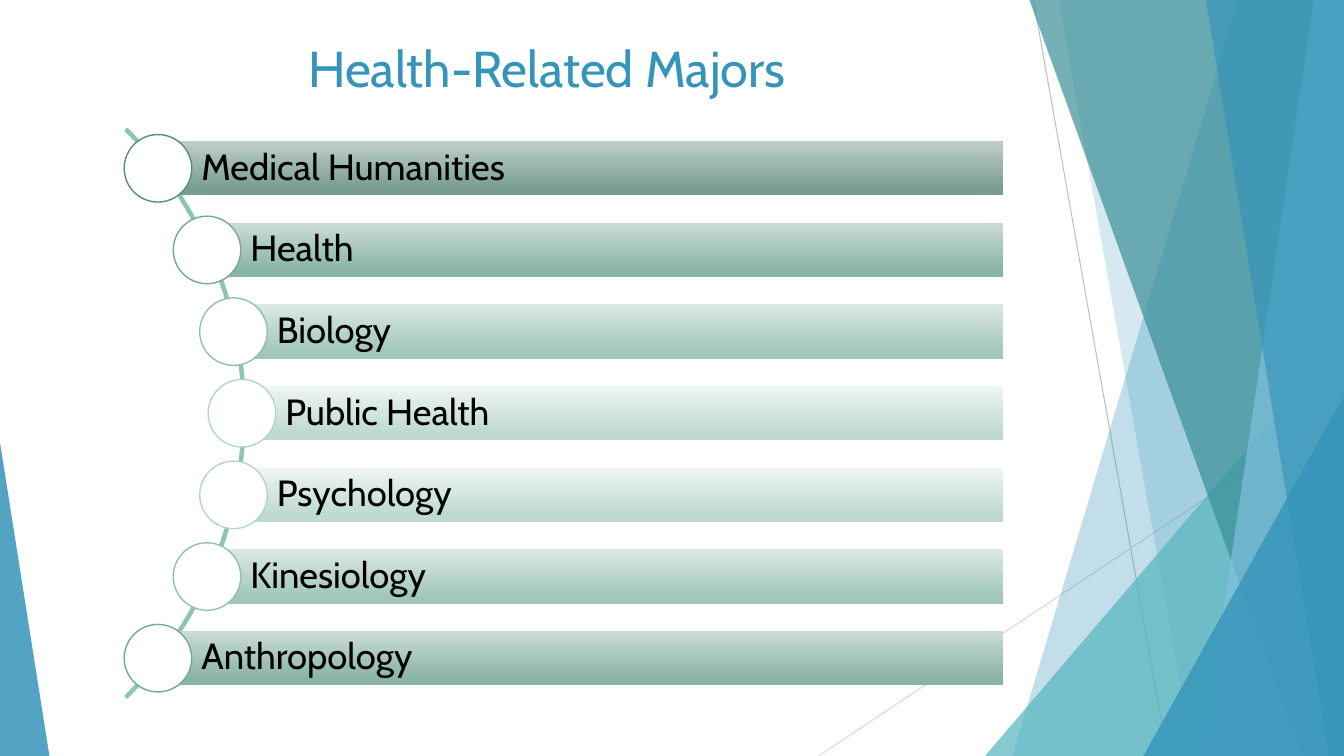
"""Build the Health-Related Majors slide."""
from dataclasses import dataclass
from math import sqrt

from lxml import etree
from pptx import Presentation
from pptx.dml.color import RGBColor
from pptx.enum.shapes import MSO_CONNECTOR, MSO_SHAPE
from pptx.enum.text import MSO_ANCHOR, PP_ALIGN
from pptx.oxml.ns import qn
from pptx.util import Inches, Pt


@dataclass(frozen=True)
class Theme:
    """Colours, font and type sizes."""
    font: str = "Cabin"
    title_size: int = 36
    label_size: int = 26
    blue: str = "3494BA"
    sky: str = "7FC1DB"
    teal: str = "58B6C0"
    deep_teal: str = "3A8F98"
    arc: str = "8CC5B2"
    white: str = "FFFFFF"
    black: str = "000000"
    dark_rule: str = "BFBFBF"
    light_rule: str = "D9D9D9"
    darkest: tuple = ("C0CFCA", "789D90", "578C7C")
    dark: tuple = ("CBDCD6", "89B4A6", "71A997")
    medium: tuple = ("DBE8E4", "A2C7BA", "93BFB0")
    light: tuple = ("EEF5F3", "BED9D0", "B5D5CA")


THEME = Theme()
WIDTH, HEIGHT = 13.33, 7.5
ARC_X, ARC_Y, ARC_RADIUS = -1.56, 4.1, 3.99
CENTRE_RADIUS, STEP = 3.96, 0.81
BAR_RIGHT, BAR_HEIGHT, CIRCLE = 9.95, 0.54, 0.67

MAJORS = [
    ("Medical Humanities", THEME.darkest),
    ("Health", THEME.dark),
    ("Biology", THEME.medium),
    ("Public Health", THEME.light),
    ("Psychology", THEME.light),
    ("Kinesiology", THEME.medium),
    ("Anthropology", THEME.dark),
]


def rgb(colour):
    """Turn a hex string into a colour."""
    return RGBColor.from_string(colour)


def fill_facet(shape, colour, opacity):
    """Give a background facet a translucent fill and no outline."""
    shape.shadow.inherit = False
    shape.line.fill.background()
    shape.fill.solid()
    shape.fill.fore_color.rgb = rgb(colour)
    colour_element = shape.fill._xPr.find(qn("a:solidFill"))[0]
    etree.SubElement(colour_element, qn("a:alpha"), val=str(opacity * 1000))


def add_band(slide, top_x, bottom_x, colour, opacity):
    """Add a facet from a slanted left edge to the slide's right edge."""
    builder = slide.shapes.build_freeform(Inches(top_x), 0)
    corners = [(WIDTH, 0), (WIDTH, HEIGHT), (bottom_x, HEIGHT)]
    builder.add_line_segments([(Inches(x), Inches(y)) for x, y in corners])
    fill_facet(builder.convert_to_shape(), colour, opacity)


def add_corner(slide, left, top, width, apex, colour, opacity):
    """Add a triangular facet standing on the slide's bottom edge."""
    shape = slide.shapes.add_shape(
        MSO_SHAPE.ISOSCELES_TRIANGLE, Inches(left), Inches(top),
        Inches(width), Inches(HEIGHT - top))
    shape.adjustments[0] = apex
    fill_facet(shape, colour, opacity)


def add_rule(slide, start, end, colour):
    """Add a thin background line."""
    points = [Inches(value) for value in (*start, *end)]
    line = slide.shapes.add_connector(MSO_CONNECTOR.STRAIGHT, *points)
    line.line.color.rgb = rgb(colour)
    line.line.width = Pt(0.75)
    etree.SubElement(line._element.spPr, qn("a:effectLst"))


def add_background(slide):
    """Add the lines and facets behind the content."""
    add_rule(slide, (10.25, 0), (11.58, HEIGHT), THEME.dark_rule)
    add_rule(slide, (WIDTH, 4.03), (8.12, HEIGHT), THEME.light_rule)
    add_band(slide, 12.28, 10.04, THEME.blue, 30)
    add_band(slide, 10.5, 11.83, THEME.blue, 20)
    add_corner(slide, 9.77, 3.33, 3.56, 1, THEME.teal, 72)
    add_band(slide, 10.21, 12.91, THEME.deep_teal, 70)
    add_band(slide, 13.03, 11.92, THEME.sky, 70)
    add_band(slide, 11.96, 13.18, THEME.blue, 65)
    add_corner(slide, 11.34, 3.93, 1.99, 1, THEME.blue, 80)
    add_corner(slide, 0, 4.39, 0.49, 0, THEME.blue, 85)


def write_text(shape, text, size, colour, anchor):
    """Set one left-aligned line of text in a shape."""
    frame = shape.text_frame
    frame.text = text
    frame.word_wrap = True
    frame.vertical_anchor = anchor
    paragraph = frame.paragraphs[0]
    paragraph.alignment = PP_ALIGN.LEFT
    font = paragraph.runs[0].font
    font.name = THEME.font
    font.size = Pt(size)
    font.color.rgb = rgb(colour)
    return frame


def add_title(slide, text):
    """Add the slide title."""
    box = slide.shapes.add_textbox(
        Inches(2.96), Inches(0.32), Inches(6.8), Inches(1.04))
    write_text(box, text, THEME.title_size, THEME.blue, MSO_ANCHOR.TOP)


def add_arc(slide):
    """Add the thin arc that links the circles."""
    arc = slide.shapes.add_shape(
        MSO_SHAPE.BLOCK_ARC, Inches(ARC_X - ARC_RADIUS),
        Inches(ARC_Y - ARC_RADIUS), Inches(2 * ARC_RADIUS),
        Inches(2 * ARC_RADIUS))
    for index, value in enumerate((189, 27, 0.003)):
        arc.adjustments[index] = value
    arc.shadow.inherit = False
    arc.fill.background()
    arc.line.color.rgb = rgb(THEME.arc)
    arc.line.width = Pt(1.5)


def add_bar(slide, left, middle, text, colours):
    """Add a gradient bar with its label."""
    bar = slide.shapes.add_shape(
        MSO_SHAPE.RECTANGLE, Inches(left), Inches(middle - BAR_HEIGHT / 2),
        Inches(BAR_RIGHT - left), Inches(BAR_HEIGHT))
    bar.shadow.inherit = False
    bar.line.fill.background()
    bar.fill.gradient()
    bar.fill.gradient_angle = 270
    for stop, position, colour in zip(bar.fill.gradient_stops, (0, 0.88), colours):
        stop.position = position
        stop.color.rgb = rgb(colour)
    frame = write_text(
        bar, text, THEME.label_size, THEME.black, MSO_ANCHOR.MIDDLE)
    frame.margin_left = Inches(0.43)
    frame.margin_top = frame.margin_right = frame.margin_bottom = Inches(0.07)
    frame.paragraphs[0].line_spacing = 0.9


def add_circle(slide, centre, middle, colour):
    """Add the white circle at the head of a bar."""
    circle = slide.shapes.add_shape(
        MSO_SHAPE.OVAL, Inches(centre - CIRCLE / 2),
        Inches(middle - CIRCLE / 2), Inches(CIRCLE), Inches(CIRCLE))
    circle.shadow.inherit = False
    circle.fill.solid()
    circle.fill.fore_color.rgb = rgb(THEME.white)
    circle.line.color.rgb = rgb(colour)
    circle.line.width = Pt(1)


def add_majors(slide):
    """Place the majors at equal heights along the arc."""
    add_arc(slide)
    for index, (name, (top, bottom, outline)) in enumerate(MAJORS):
        offset = (index - len(MAJORS) // 2) * STEP
        centre = ARC_X + sqrt(CENTRE_RADIUS ** 2 - offset ** 2)
        add_bar(slide, centre, ARC_Y + offset, name, (top, bottom))
        add_circle(slide, centre, ARC_Y + offset, outline)


def main():
    """Build and save the presentation."""
    presentation = Presentation()
    presentation.slide_width = Inches(WIDTH)
    presentation.slide_height = Inches(HEIGHT)
    slide = presentation.slides.add_slide(presentation.slide_layouts[6])
    add_background(slide)
    add_title(slide, "Health-Related Majors")
    add_majors(slide)
    presentation.save("out.pptx")


if __name__ == "__main__":
    main()
